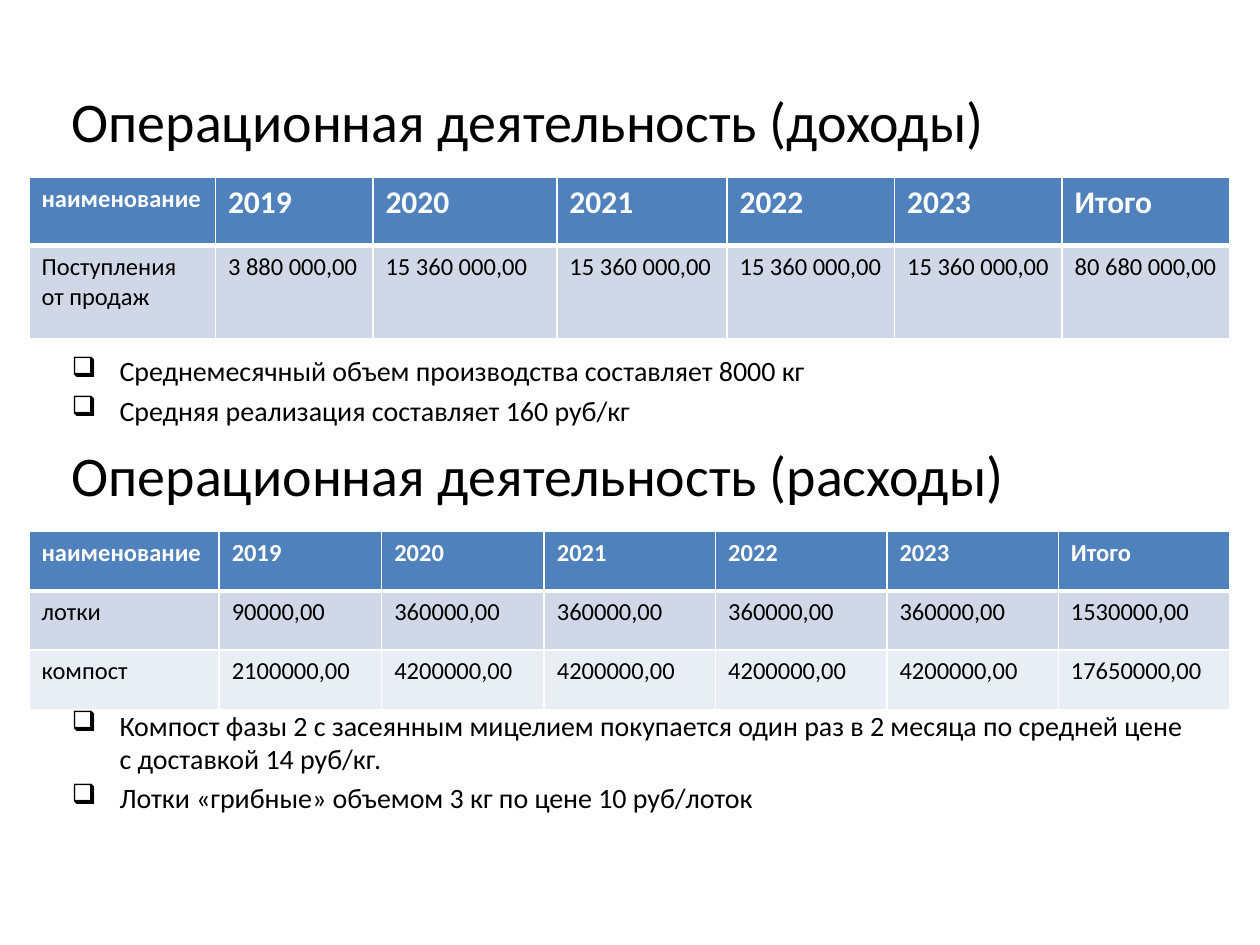
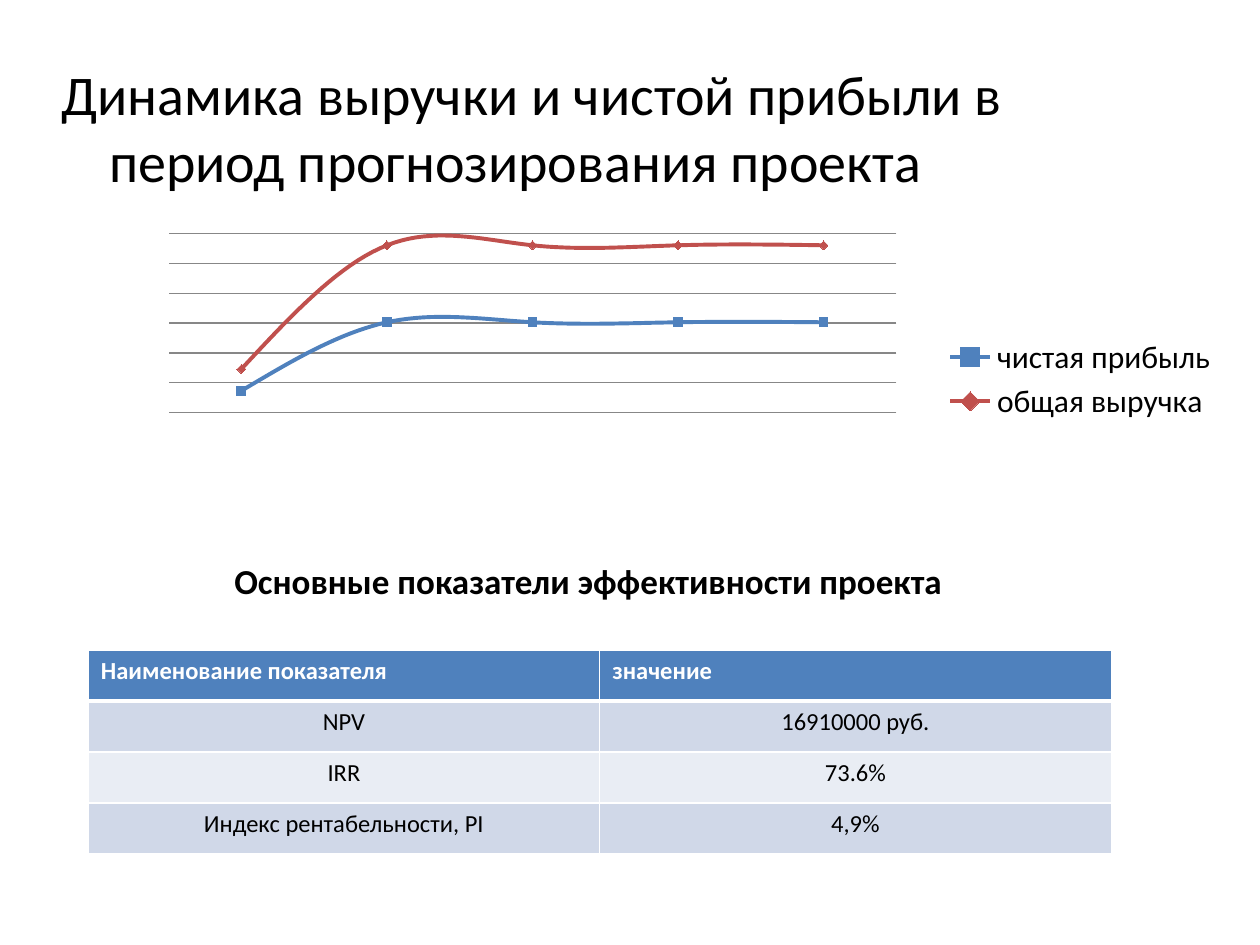
from lxml import etree
from pptx import Presentation
from pptx.chart.data import CategoryChartData
from pptx.dml.color import RGBColor
from pptx.enum import chart as ch, text as tx
from pptx.oxml import parse_xml
from pptx.oxml.ns import nsdecls, qn
from pptx.util import Inches, Pt

FONT = "Calibri"
BLACK = RGBColor(0x00, 0x00, 0x00)
WHITE = RGBColor(0xFF, 0xFF, 0xFF)
BLUE = RGBColor(0x4F, 0x81, 0xBD)
RED = RGBColor(0xC0, 0x50, 0x4D)
GREY = RGBColor(0x87, 0x87, 0x87)
BANDS = [RGBColor(0xD0, 0xD8, 0xE8), RGBColor(0xE9, 0xED, 0xF4)]
INDENT = 3.8
TITLE_SIZE, CELL_SIZE, BULLET_SIZE = 32, 14, 16


def grid(*units):
    """Lengths on a grid of 100 columns by 75 rows."""
    return [Inches(round(unit / 10, 3)) for unit in units]


def add_run(paragraph, words, size, color=BLACK, bold=False):
    run = paragraph.add_run()
    run.text = words
    run.font.name, run.font.size = FONT, Pt(size)
    run.font.color.rgb, run.font.bold = color, bold


def hang(paragraph, bullet=None):
    props = paragraph._p.get_or_add_pPr()
    indent, = grid(INDENT)
    props.set("marL", str(indent))
    props.set("indent", str(-indent))
    if bullet:
        etree.SubElement(props, qn("a:buChar")).set("char", bullet)


def add_lines(slide, box, lines, size, bold=False, bullet=None, align=None):
    frame = slide.shapes.add_textbox(*grid(*box)).text_frame
    frame.word_wrap = True
    for i, line in enumerate(lines):
        paragraph = frame.add_paragraph() if i else frame.paragraphs[0]
        if align is None:
            hang(paragraph, bullet)
        else:
            paragraph.alignment = align
        if i:
            paragraph.space_before = Pt(size * 0.2)
        add_run(paragraph, line, size, bold=bold)


def set_borders(cell, top, bottom):
    props = cell._tc.get_or_add_tcPr()
    for side, width in zip("LRTB", (1, 1, top, bottom)):
        props.append(parse_xml(
            f'<a:ln{side} {nsdecls("a")} w="{Pt(width)}"><a:solidFill>'
            f'<a:srgbClr val="{WHITE}"/></a:solidFill></a:ln{side}>'))


def add_banded_table(slide, box, rows, columns, heights, year_size=CELL_SIZE, align=None):
    table = slide.shapes.add_table(len(rows), len(columns), *grid(*box)).table
    for column, width in zip(table.columns, grid(*columns)):
        column.width = width
    for row, height in zip(table.rows, grid(*heights)):
        row.height = height
    for r, row in enumerate(rows):
        for c, words in enumerate(row):
            cell = table.cell(r, c)
            header = r == 0
            set_borders(cell, 3 if r == 1 else 1, 3 if header else 1)
            cell.fill.solid()
            cell.fill.fore_color.rgb = BLUE if header else BANDS[(r - 1) % 2]
            paragraph = cell.text_frame.paragraphs[0]
            if align is not None and not header:
                paragraph.alignment = align
            add_run(paragraph, words, year_size if header and c else CELL_SIZE,
                    WHITE if header else BLACK, header)


def add_activity(slide, box, heading, table, notes):
    """Heading, table by years and notes, stacked in one half of the slide."""
    left, top, width, height = box
    inset = left + 2.4
    add_lines(slide, (inset, top, 91.1, 6.4), [heading], TITLE_SIZE)
    add_banded_table(slide, (left, top + 7.7, width, sum(table["heights"])), **table)
    add_lines(slide, (inset, top + 21.2, 91.1, height - 21.2), notes, BULLET_SIZE, bullet="❑")


def add_dynamics_chart(slide, box):
    data = CategoryChartData()
    data.categories = ["1", "2", "3", "4", "5"]
    data.add_series("чистая прибыль", [13] + [54] * 4)
    data.add_series("общая выручка", [26] + [100] * 4)
    chart = slide.shapes.add_chart(ch.XL_CHART_TYPE.LINE_MARKERS, *grid(*box), data).chart
    chart.has_title = False
    chart.font.name, chart.font.size = FONT, Pt(18)
    chart.font.color.rgb = BLACK

    # Legend
    chart.has_legend = True
    chart.legend.position = ch.XL_LEGEND_POSITION.RIGHT
    chart.legend.include_in_layout = True

    # Axes: only the gridlines show
    chart.category_axis.visible = False
    values = chart.value_axis
    values.visible = False
    values.minimum_scale, values.maximum_scale, values.major_unit = 0, 107, 17.83
    values.has_major_gridlines = True
    values.major_gridlines.format.line.color.rgb = GREY
    values.major_gridlines.format.line.width = Pt(0.75)

    # Series
    plot = chart.plots[0]
    plot.vary_by_categories = False
    markers = (ch.XL_MARKER_STYLE.SQUARE, ch.XL_MARKER_STYLE.DIAMOND)
    for series, color, marker in zip(plot.series, (BLUE, RED), markers):
        series.smooth = True
        series.format.line.color.rgb = color
        series.format.line.width = Pt(2.25)
        series.marker.style, series.marker.size = marker, 5
        series.marker.format.fill.solid()
        series.marker.format.fill.fore_color.rgb = color
        series.marker.format.line.color.rgb = color

    # Plot area as shares of the chart
    area = chart._chartSpace.find(".//" + qn("c:plotArea"))
    for layout in area.findall(qn("c:layout")):
        area.remove(layout)
    settings = dict(layoutTarget="inner", xMode="edge", yMode="edge",
                    x=0.101, y=0.052, w=0.616, h=0.551)
    parts = "".join(f'<c:{key} val="{value}"/>' for key, value in settings.items())
    area.insert(0, parse_xml(f'<c:layout {nsdecls("c")}><c:manualLayout>{parts}'
                             '</c:manualLayout></c:layout>'))


def build_activities(slide):
    header = ["наименование", "2019", "2020", "2021", "2022", "2023", "Итого"]
    income = dict(
        rows=[header, ["Поступления от продаж", "3 880 000,00"]
              + ["15 360 000,00"] * 4 + ["80 680 000,00"]],
        columns=[14.8, 12.5, 14.6, 13.5] + [13.3] * 3, heights=[5.4, 7.4], year_size=18)
    costs = dict(
        rows=[header,
              ["лотки", "90000,00"] + ["360000,00"] * 4 + ["1530000,00"],
              ["компост", "2100000,00"] + ["4200000,00"] * 4 + ["17650000,00"]],
        columns=[15.1] + [12.9] * 2 + [13.6] * 4, heights=[4.7] * 3)
    activities = [
        ("Операционная деятельность (доходы)", income,
         ["Среднемесячный объем производства составляет 8000 кг",
          "Средняя реализация составляет 160 руб/кг"]),
        ("Операционная деятельность (расходы)", costs,
         ["Компост фазы 2 с засеянным мицелием покупается один раз в 2 месяца "
          "по средней цене с доставкой 14 руб/кг.",
          "Лотки «грибные» объемом 3 кг по цене 10 руб/лоток"]),
    ]
    for i, activity in enumerate(activities):
        add_activity(slide, (2.3, 6.4 + 28.1 * i, 95.3, 28.1), *activity)


def build_results(slide):
    add_lines(slide, (3.9, 4.2, 90, 11.8),
              ["Динамика выручки и чистой прибыли в период прогнозирования проекта"], TITLE_SIZE)
    add_dynamics_chart(slide, (3.9, 17.2, 93.8, 25.8))
    add_lines(slide, (3.9, 43.9, 85.6, 4.4), ["Основные показатели эффективности проекта"],
              20, bold=True, align=tx.PP_ALIGN.CENTER)
    indicators = [["Наименование показателя", "значение"], ["NPV", "16910000 руб."],
                  ["IRR", "73.6%"], ["Индекс рентабельности, PI", "4,9%"]]
    add_banded_table(slide, (7, 51.6, 81.2, 16.2), indicators, [40.6] * 2, [4.05] * 4,
                     align=tx.PP_ALIGN.CENTER)


def main():
    deck = Presentation()
    deck.slide_width, deck.slide_height = grid(100, 75)
    for build in (build_activities, build_results):
        build(deck.slides.add_slide(deck.slide_layouts[6]))
    deck.save("out.pptx")


if __name__ == "__main__":
    main()
